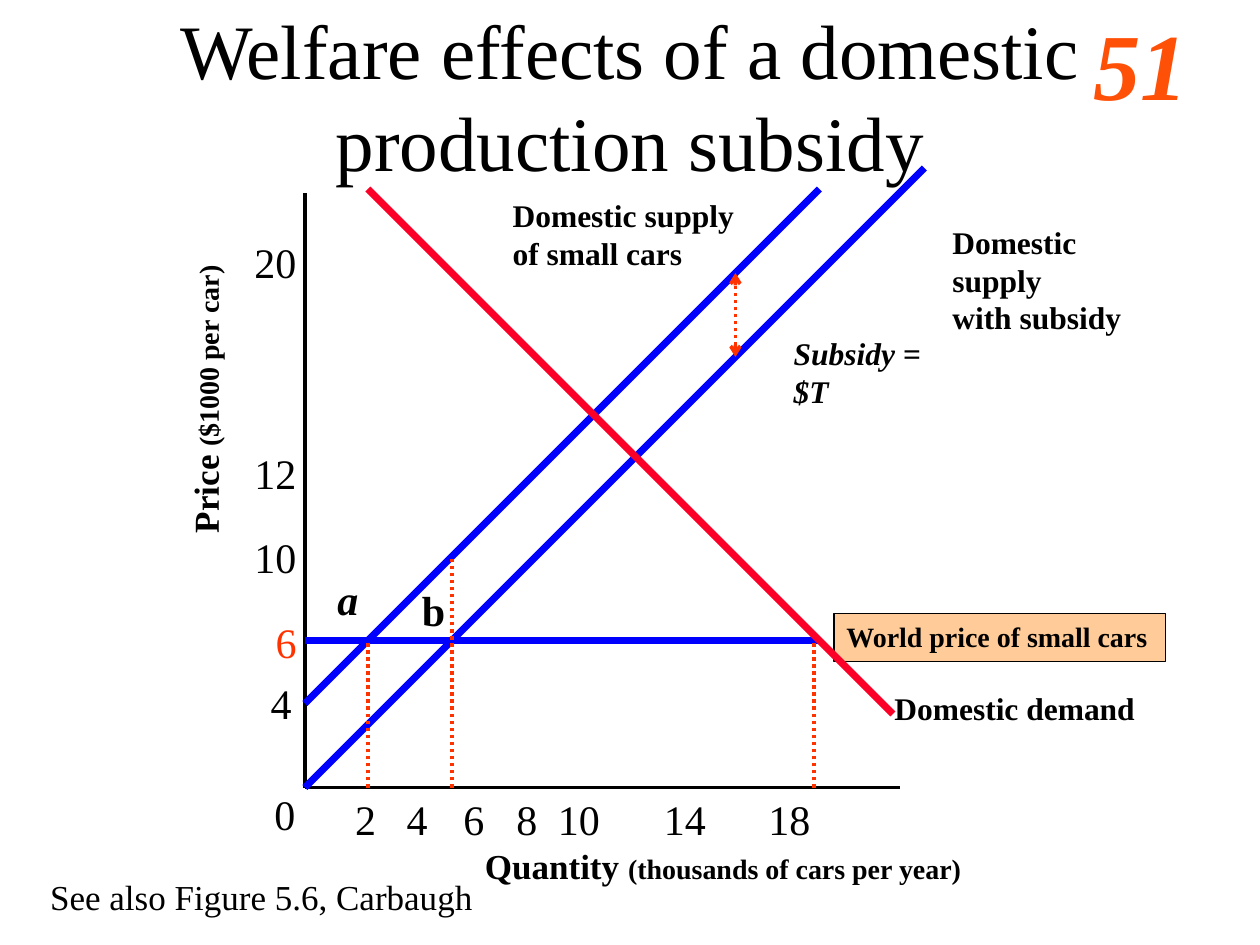
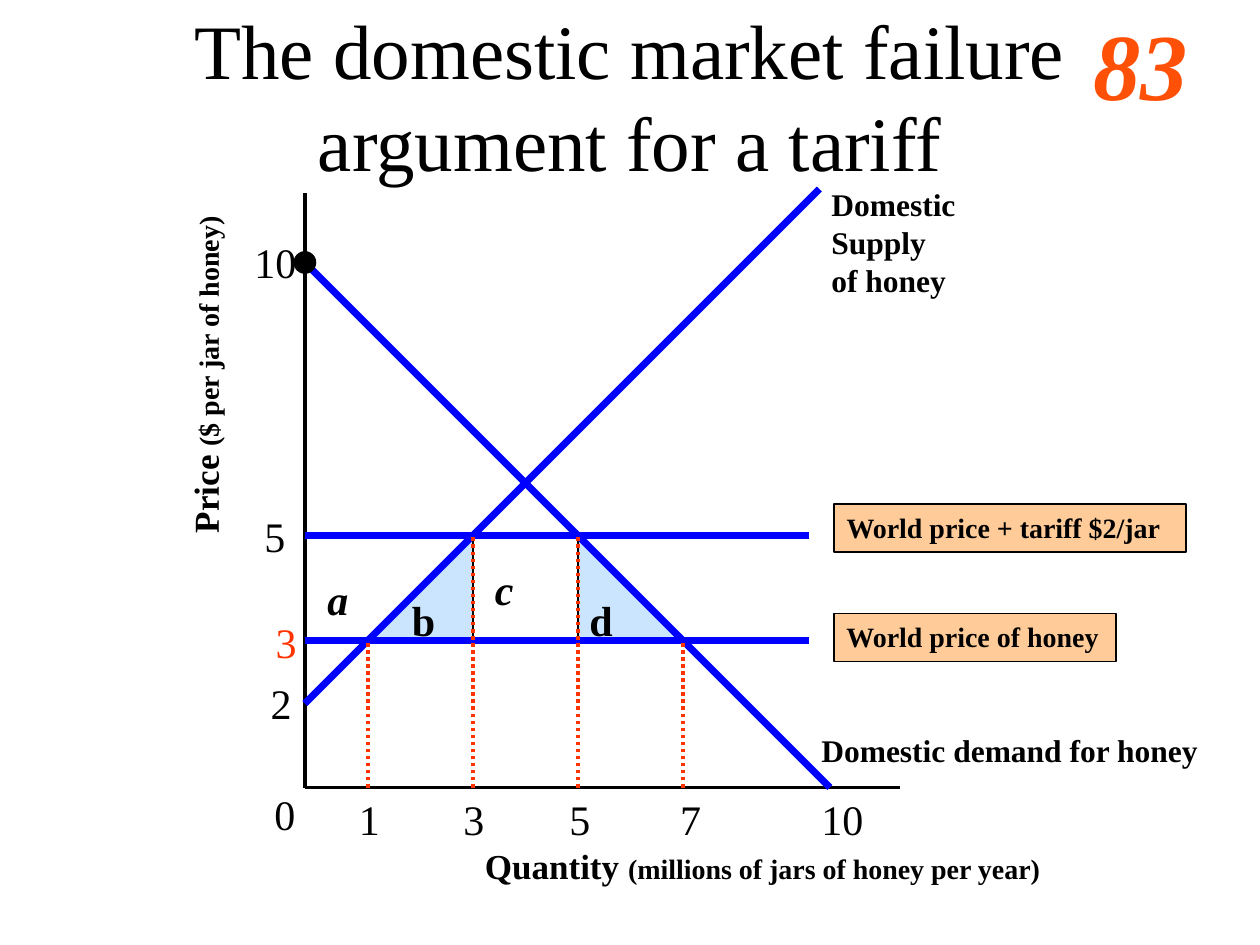
"""Build two supply-and-demand slides on one shared chart grid."""
from lxml.etree import SubElement
from pptx import Presentation
from pptx.dml.color import RGBColor
from pptx.enum.dml import MSO_LINE
from pptx.enum.shapes import MSO_CONNECTOR, MSO_SHAPE
from pptx.enum.text import MSO_ANCHOR, MSO_AUTO_SIZE, PP_ALIGN
from pptx.oxml.ns import qn
from pptx.util import Inches, Pt

FONT = "Times New Roman"
BLACK, BLUE, RED = "000000", "0000FF", "FC0128"
DOT, MARK, PEACH, SKY = "FF3300", "FF5008", "FFCC99", "99CCFF"
LEFT, BASE, CELL = 2.42, 6.25, 1 / 12
TICK = {1: 0.37, 2: 0.53}
AXES = [((0, 0), (0, 56.6)), ((0, 0), (56.7, 0))]

# Chart points are (column, row) cells from the origin; labels are in inches.
SLIDES = [
    {
        "title": "Welfare effects of a domestic production subsidy",
        "mark": "51",
        "areas": [],
        "boxes": [("World price of small cars", 4.87, 2.63)],
        "curves": [((0, 8), (49, 57), BLUE), ((0, 14), (49, 14), BLUE),
                   ((0, 0), (59, 59), BLUE), ((6, 57), (56, 7), RED)],
        "drops": [(6, 0, 14), (14, 0, 22), (48.5, 0, 14)],
        "gaps": [(41, 41, 49)],
        "knobs": [],
        "prices": [("6", 2.09, 4.84, DOT), ("10", 1.92, 4.17, BLACK),
                   ("20", 1.92, 1.83, BLACK), ("12", 1.92, 3.5, BLACK),
                   ("4", 2.05, 5.33, BLACK)],
        "amounts": [("2", 2.72), ("4", 3.13), ("6", 3.58), ("8", 4),
                    ("10", 4.33), ("14", 5.17), ("18", 6)],
        "zones": [("a", 2.58, 4.5, True), ("b", 3.25, 4.59, False)],
        "names": [("Domestic supply\nof small cars", 3.97, 1.51, 1.96, False, False),
                  ("Domestic supply\vwith subsidy", 7.46, 1.72, 1.9, True, False),
                  ("Subsidy = $T", 6.2, 2.6, 1.5, True, True),
                  ("Domestic demand", 7, 5.42, 2.17, False, False)],
        "across": ("(thousands of cars per year)", 3.99),
        "up": ("($1000 per car)", 0.46, 2.95, 2.33),
        "source": "See also Figure 5.6, Carbaugh",
    },
    {
        "title": "The domestic market failure argument for a tariff",
        "mark": "83",
        "areas": [(6, 24, True), (26, 24, False)],
        "boxes": [("World price of honey", 4.87, 2.24),
                  ("World price + tariff $2/jar", 4, 2.79)],
        "curves": [((0, 8), (49, 57), BLUE), ((0, 50), (50, 0), BLUE),
                   ((0, 14), (48, 14), BLUE), ((0, 24), (48, 24), BLUE)],
        "drops": [(6, 0, 14), (16, 0, 24), (26, 0, 24), (36, 0, 14)],
        "gaps": [],
        "knobs": [(0, 50)],
        "prices": [("3", 2.09, 4.84, DOT), ("5", 2, 4, BLACK),
                   ("10", 1.92, 1.83, BLACK), ("2", 2.05, 5.33, BLACK)],
        "amounts": [("1", 2.75), ("3", 3.58), ("5", 4.42), ("7", 5.3), ("10", 6.42)],
        "zones": [("a", 2.5, 4.5, True), ("b", 3.17, 4.67, False),
                  ("c", 3.83, 4.42, True), ("d", 4.58, 4.67, False)],
        "names": [("Domestic Supply\nof honey", 6.5, 1.42, 1.9, True, False),
                  ("Domestic demand for honey", 6.42, 5.75, 3.19, False, False)],
        "across": ("(millions of jars of honey per year)", 4.62),
        "up": ("($ per jar of honey)", 0.26, 2.75, 2.73),
        "source": None,
    },
]


def hue(code):
    return RGBColor.from_string(code)


def spot(col, row):
    return Inches(LEFT + col * CELL), Inches(BASE - row * CELL)


def style(font, size, color=BLACK, bold=False, slant=False):
    font.name, font.size = FONT, Pt(size)
    font.bold, font.italic = bold, slant
    font.color.rgb = hue(color)


def fill_text(shape, text, size, color=BLACK, bold=False, slant=False, wrap=False):
    frame = shape.text_frame
    frame.text = text
    frame.word_wrap = wrap
    frame.auto_size = MSO_AUTO_SIZE.SHAPE_TO_FIT_TEXT
    frame.vertical_anchor = MSO_ANCHOR.TOP
    for para in frame.paragraphs:
        para.alignment = PP_ALIGN.LEFT
        style(para.font, size, color, bold, slant)


def label(slide, text, x, y, w, h, size, **look):
    box = slide.shapes.add_textbox(*map(Inches, (x, y, w, h)))
    fill_text(box, text, size, **look)
    return box


def caption(slide, head, tail, x, y, w):
    box = label(slide, head, x, y, w, 0.43, 20, bold=True)
    run = box.text_frame.paragraphs[0].add_run()
    run.text = tail
    run.font.size = Pt(16)
    return box


def solid(slide, kind, place, color):
    shape = slide.shapes.add_shape(kind, *place)
    shape.shadow.inherit = False
    shape.fill.solid()
    shape.fill.fore_color.rgb = hue(color)
    shape.line.color.rgb = hue(BLACK)
    shape.line.width = Pt(1)
    return shape


def stroke(slide, start, end, color, width, dots=False, heads=False):
    link = slide.shapes.add_connector(MSO_CONNECTOR.STRAIGHT, *spot(*start), *spot(*end))
    link.line.color.rgb = hue(color)
    link.line.width = Pt(width)
    if dots:
        link.line.dash_style = MSO_LINE.ROUND_DOT
    props = link.element.spPr
    if heads:
        for tag in ("a:headEnd", "a:tailEnd"):
            SubElement(props.get_or_add_ln(), qn(tag)).set("type", "arrow")
    SubElement(props, qn("a:effectLst"))


def area(slide, col, row, flip):
    side = Inches(10 * CELL)
    shape = solid(slide, MSO_SHAPE.RIGHT_TRIANGLE, (*spot(col, row), side, side), SKY)
    props = shape.element.spPr
    tint = props.find(qn("a:solidFill")).find(qn("a:srgbClr"))
    SubElement(tint, qn("a:alpha")).set("val", "50000")
    if flip:
        props.find(qn("a:xfrm")).set("flipH", "1")


def heading(slide, text, mark):
    title = slide.shapes.title
    title.left, title.top, title.width, title.height = map(Inches, (0.75, 0, 8.5, 1.5))
    fill_text(title, text, 44, wrap=True)
    title.text_frame.auto_size = MSO_AUTO_SIZE.NONE
    title.text_frame.vertical_anchor = MSO_ANCHOR.MIDDLE
    title.text_frame.paragraphs[0].alignment = PP_ALIGN.CENTER
    label(slide, mark, 8.58, 0, 1.33, 1, 54, color=MARK, bold=True, slant=True, wrap=True)


def graph(slide, data):
    for item in data["areas"]:
        area(slide, *item)
    for start, end in AXES:
        stroke(slide, start, end, BLACK, 2)
    for text, y, w in data["boxes"]:
        place = map(Inches, (6.62, y, w, 0.38))
        fill_text(solid(slide, MSO_SHAPE.RECTANGLE, place, PEACH), text, 16, bold=True)
    for start, end, color in data["curves"]:
        stroke(slide, start, end, color, 4)
    for key in ("drops", "gaps"):
        for col, low, high in data[key]:
            stroke(slide, (col, low), (col, high), DOT, 2, True, key == "gaps")
    for col, row in data["knobs"]:
        place = (*spot(col - 1, row + 1), Inches(2 * CELL), Inches(2 * CELL))
        solid(slide, MSO_SHAPE.OVAL, place, BLACK)


def words(slide, data):
    ticks = [("0", 2.08, 6.21, BLACK)] + data["prices"]
    ticks += [(text, x, BASE, BLACK) for text, x in data["amounts"]]
    for text, x, y, color in ticks:
        label(slide, text, x, y, TICK[len(text)], 0.5, 24, color=color)
    for text, x, y, slant in data["zones"]:
        label(slide, text, x, y, TICK[1], 0.5, 24, bold=True, slant=slant)
    for text, x, y, w, wrap, slant in data["names"]:
        high = 0.4 if len(text.splitlines()) == 1 else 0.7
        label(slide, text, x, y, w, high, 18, bold=True, slant=slant, wrap=wrap)
    unit, wide = data["across"]
    caption(slide, "Quantity ", unit, 3.75, 6.65, wide)
    caption(slide, "Price ", *data["up"]).rotation = 270
    if data["source"]:
        label(slide, data["source"], 0.3, 6.9, 3.7, 0.43, 20, wrap=True)


def main():
    deck = Presentation()
    deck.slide_width, deck.slide_height = Inches(10), Inches(7.5)
    for data in SLIDES:
        slide = deck.slides.add_slide(deck.slide_layouts[5])
        heading(slide, data["title"], data["mark"])
        graph(slide, data)
        words(slide, data)
    deck.save("out.pptx")


if __name__ == "__main__":
    main()
